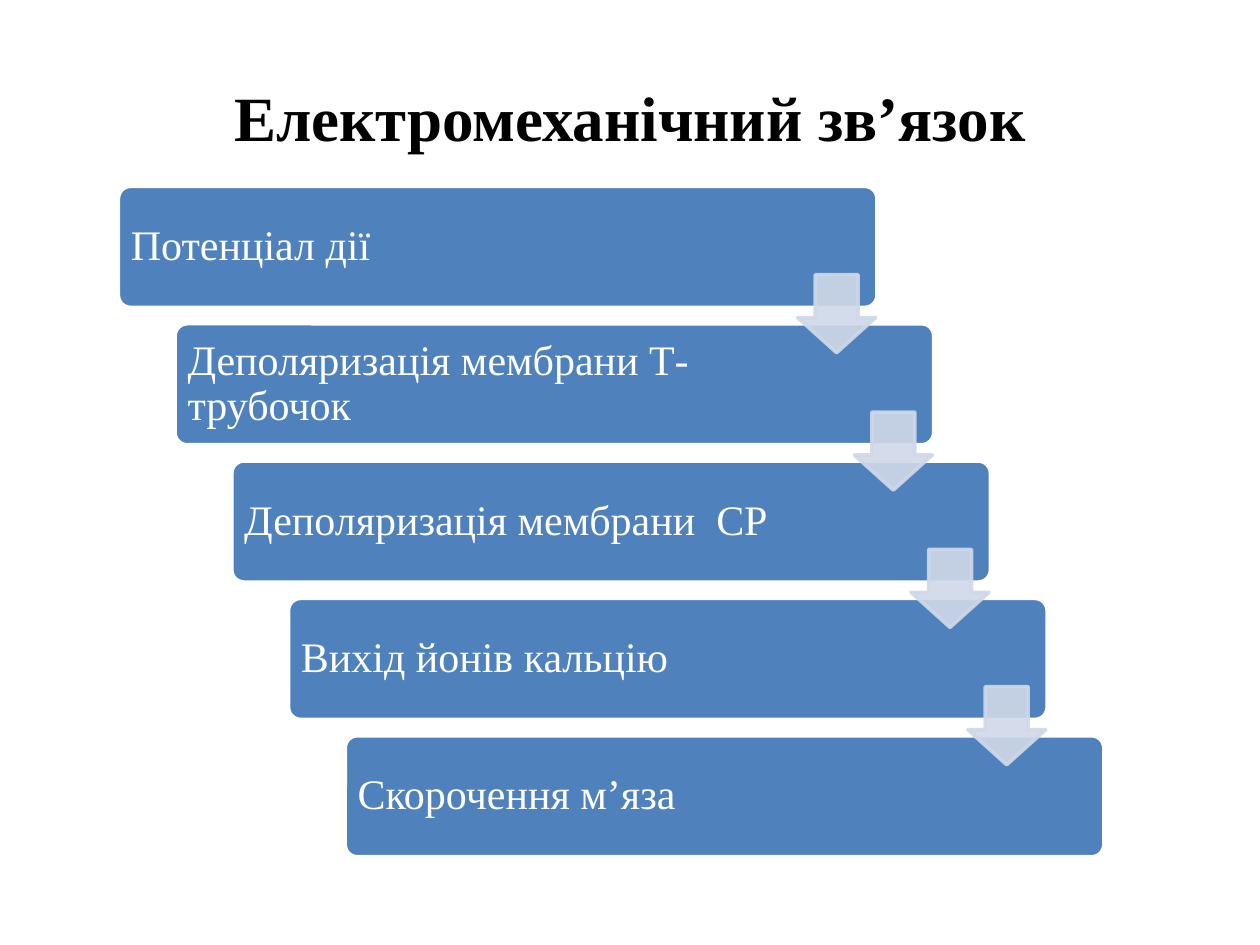
from lxml import etree
from pptx import Presentation
from pptx.dml.color import RGBColor
from pptx.enum.shapes import MSO_SHAPE
from pptx.enum.text import MSO_ANCHOR, PP_ALIGN
from pptx.oxml.ns import qn
from pptx.util import Inches, Pt

ROUNDED = MSO_SHAPE.ROUNDED_RECTANGLE
DOWN_ARROW = MSO_SHAPE.DOWN_ARROW
MIDDLE = MSO_ANCHOR.MIDDLE
LEFT, CENTER = PP_ALIGN.LEFT, PP_ALIGN.CENTER

COLORS = {"title": "000000", "box": "4F81BD", "white": "FFFFFF", "arrow": "D0D8E8"}
STEPS = [
    "Потенціал дії",
    "Деполяризація мембрани Т-трубочок",
    "Деполяризація мембрани  СР",
    "Вихід йонів кальцію",
    "Скорочення м’яза",
]
STEP_X, STEP_Y = 0.45, 1.09


def set_opacity(shape, percent):
    """Make the solid fill and the line of a shape partly transparent."""
    for solid_fill in shape._element.spPr.iter(qn("a:solidFill")):
        alpha = etree.SubElement(solid_fill[0], qn("a:alpha"))
        alpha.set("val", str(percent * 1000))


class SlideBuilder:
    font = "Times New Roman"

    def __init__(self, slide):
        self.slide = slide

    def add_text(self, frame, text, size, color, align, bold=False):
        frame.word_wrap = True
        frame.vertical_anchor = MIDDLE
        paragraph = frame.paragraphs[0]
        paragraph.alignment = align
        run = paragraph.add_run()
        run.text = text
        run.font.name = self.font
        run.font.size = Pt(size)
        run.font.bold = bold
        run.font.color.rgb = RGBColor.from_string(COLORS[color])
        return paragraph

    def add_title(self, text):
        shape = self.slide.shapes.title
        shape.left, shape.top = Inches(0.5), Inches(0.3)
        shape.width, shape.height = Inches(9), Inches(1.25)
        self.add_text(shape.text_frame, text, 36, "title", CENTER, bold=True)

    def add_preset(self, kind, left, top, width, height, fill, line, adjustments):
        shape = self.slide.shapes.add_shape(
            kind, Inches(left), Inches(top), Inches(width), Inches(height))
        shape.shadow.inherit = False
        shape.fill.solid()
        shape.fill.fore_color.rgb = RGBColor.from_string(COLORS[fill])
        shape.line.color.rgb = RGBColor.from_string(COLORS[line])
        shape.line.width = Pt(2)
        for index, value in enumerate(adjustments):
            shape.adjustments[index] = value
        return shape

    def add_step_box(self, left, top, text):
        shape = self.add_preset(
            ROUNDED, left, top, 6.02, 0.96, "box", "white", [0.1])
        frame = shape.text_frame
        frame.margin_left = frame.margin_top = frame.margin_bottom = Inches(0.07)
        frame.margin_right = Inches(1.15)  # keeps the text clear of the arrows
        paragraph = self.add_text(frame, text, 24, "white", LEFT)
        paragraph.line_spacing = 0.9

    def add_arrow(self, left, top):
        shape = self.add_preset(
            DOWN_ARROW, left, top, 0.62, 0.62, "arrow", "arrow", [0.55, 0.45])
        set_opacity(shape, 90)


def main():
    presentation = Presentation()
    presentation.slide_width, presentation.slide_height = Inches(10), Inches(7.5)
    title_only = presentation.slide_layouts[5]
    builder = SlideBuilder(presentation.slides.add_slide(title_only))

    builder.add_title("Електромеханічний зв’язок")
    for index, text in enumerate(STEPS):
        builder.add_step_box(0.94 + index * STEP_X, 1.48 + index * STEP_Y, text)
    for index in range(len(STEPS) - 1):
        builder.add_arrow(6.33 + index * STEP_X, 2.18 + index * STEP_Y)

    presentation.save("out.pptx")


if __name__ == "__main__":
    main()
